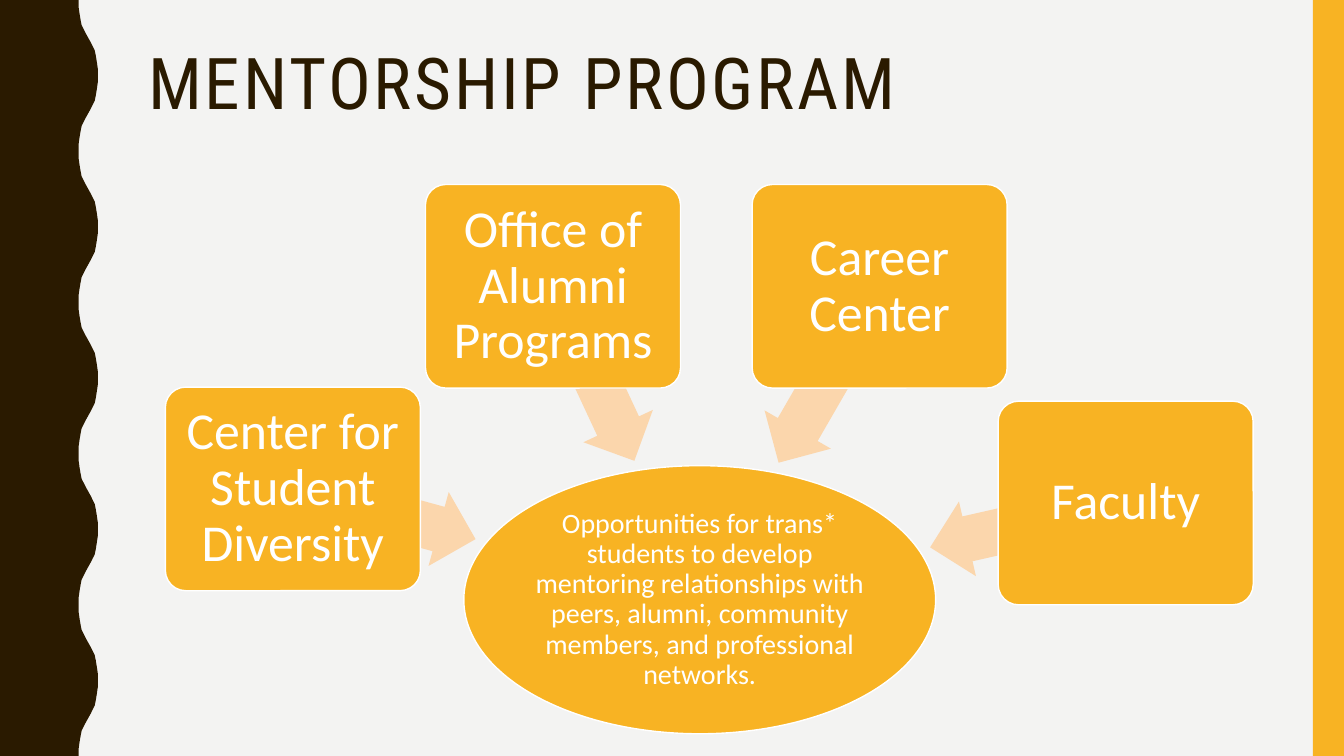
from pptx import Presentation
from pptx.dml.color import RGBColor
from pptx.enum.shapes import MSO_SHAPE as SHAPE
from pptx.enum.text import MSO_ANCHOR as ANCHOR, PP_ALIGN as ALIGN
from pptx.util import Inches, Pt

COLORS = {
    "background": "F3F3F2",
    "brown": "2A1A00",
    "gold": "F8B323",
    "peach": "FBD6AC",
    "white": "FFFFFF",
}
WIDTH, HEIGHT = 13.33, 7.5
BOX_W, BOX_H = 2.53, 2.02
ARROW_H = 0.76
WAVE_HALF = 0.75
WAVE_MIN, WAVE_MAX = 0.78, 0.97
WAVE_START = [(0.78, 0), (0.78, 0.07), (0.79, 0.14), (0.8, 0.2),
              (0.81, 0.25), (0.83, 0.29), (0.85, 0.33)]
GOAL = ("Opportunities for trans* students to develop mentoring relationships "
        "with peers, alumni, community members, and professional networks.")
PARTNERS = [
    ("Center for Student Diversity", (1.64, 3.84), (2.87, 4.72, 1.88), 195.3),
    ("Office of Alumni Programs", (4.22, 1.83), (4.94, 3.33, 1.9), 245),
    ("Career Center", (7.46, 1.83), (7.22, 3.34, 2.01), 300),
    ("Faculty", (9.9, 3.98), (9.2, 4.83, 1.99), 347.2),
]


def color(name):
    """Return the named colour."""
    return RGBColor.from_string(COLORS[name])


def paint(sp, fill, outlined=False):
    """Set fill and outline, without a shadow."""
    sp.shadow.inherit = False
    sp.fill.solid()
    sp.fill.fore_color.rgb = color(fill)
    if outlined:
        sp.line.color.rgb = color("white")
        sp.line.width = Pt(1)
    else:
        sp.line.fill.background()


def add_shape(s, kind, left, top, width, height, fill, outlined=False):
    """Add a painted preset shape."""
    sp = s.shapes.add_shape(kind, Inches(left), Inches(top),
                            Inches(width), Inches(height))
    paint(sp, fill, outlined)
    return sp


def set_label(sp, text, size, inset):
    """Write centred white text inside a shape."""
    tf = sp.text_frame
    tf.word_wrap = True
    tf.vertical_anchor = ANCHOR.MIDDLE
    tf.margin_left = tf.margin_right = Inches(inset)
    tf.margin_top = tf.margin_bottom = Inches(inset)
    p = tf.paragraphs[0]
    p.text = text
    p.alignment = ALIGN.CENTER
    p.line_spacing = 0.9
    p.font.size = Pt(size)
    p.font.name = "Calibri"
    p.font.color.rgb = color("white")


def add_wave(s):
    """Add the band with a wavy right edge."""
    rise = WAVE_START + [(WAVE_MIN + WAVE_MAX - x, WAVE_HALF - y)
                         for x, y in reversed(WAVE_START)]
    fall = [(x, 2 * WAVE_HALF - y) for x, y in reversed(rise)]
    period = 2 * WAVE_HALF
    edge = [(x, y + i * period) for i in range(round(HEIGHT / period))
            for x, y in rise + fall]
    points = [(Inches(x), Inches(y)) for x, y in edge + [(0, HEIGHT)]]
    builder = s.shapes.build_freeform(0, 0)
    builder.add_line_segments(points, close=True)
    paint(builder.convert_to_shape(), "brown")


def set_title(s, text):
    """Place and format the title."""
    sp = s.shapes.title
    sp.left, sp.top = Inches(1.37), Inches(0.42)
    sp.width, sp.height = Inches(11.13), Inches(1.63)
    tf = sp.text_frame
    tf.vertical_anchor = ANCHOR.TOP
    p = tf.paragraphs[0]
    r = p.add_run()
    r.text = text
    p.alignment = ALIGN.LEFT
    p.line_spacing = 0.9
    p.font.size = Pt(51)
    p.font.name = "Roboto Condensed"
    p.font.color.rgb = color("brown")
    r.font._element.set("spc", "200")


def add_partner(s, name, corner, arrow, angle):
    """Add a partner box over the arrow that leads to the goal."""
    sp = add_shape(s, SHAPE.LEFT_ARROW, *arrow, ARROW_H, "peach")
    sp.rotation = angle
    sp.adjustments[0] = 0.6
    sp.adjustments[1] = 0.5
    box = add_shape(s, SHAPE.ROUNDED_RECTANGLE, *corner, BOX_W, BOX_H,
                    "gold", True)
    box.adjustments[0] = 0.1
    set_label(box, name, 37, 0.08)


def main():
    """Build the slide and save it."""
    prs = Presentation()
    prs.slide_width, prs.slide_height = Inches(WIDTH), Inches(HEIGHT)
    s = prs.slides.add_slide(prs.slide_layouts[5])
    s.background.fill.solid()
    s.background.fill.fore_color.rgb = color("background")
    add_wave(s)
    add_shape(s, SHAPE.RECTANGLE, 13.02, 0, 0.31, HEIGHT, "gold")
    set_title(s, "MENTORSHIP PROGRAM")
    goal = add_shape(s, SHAPE.OVAL, 4.6, 4.62, 4.68, 2.66, "gold", True)
    set_label(goal, GOAL, 20, 0.01)
    for partner in PARTNERS:
        add_partner(s, *partner)
    prs.save("out.pptx")


if __name__ == "__main__":
    main()
